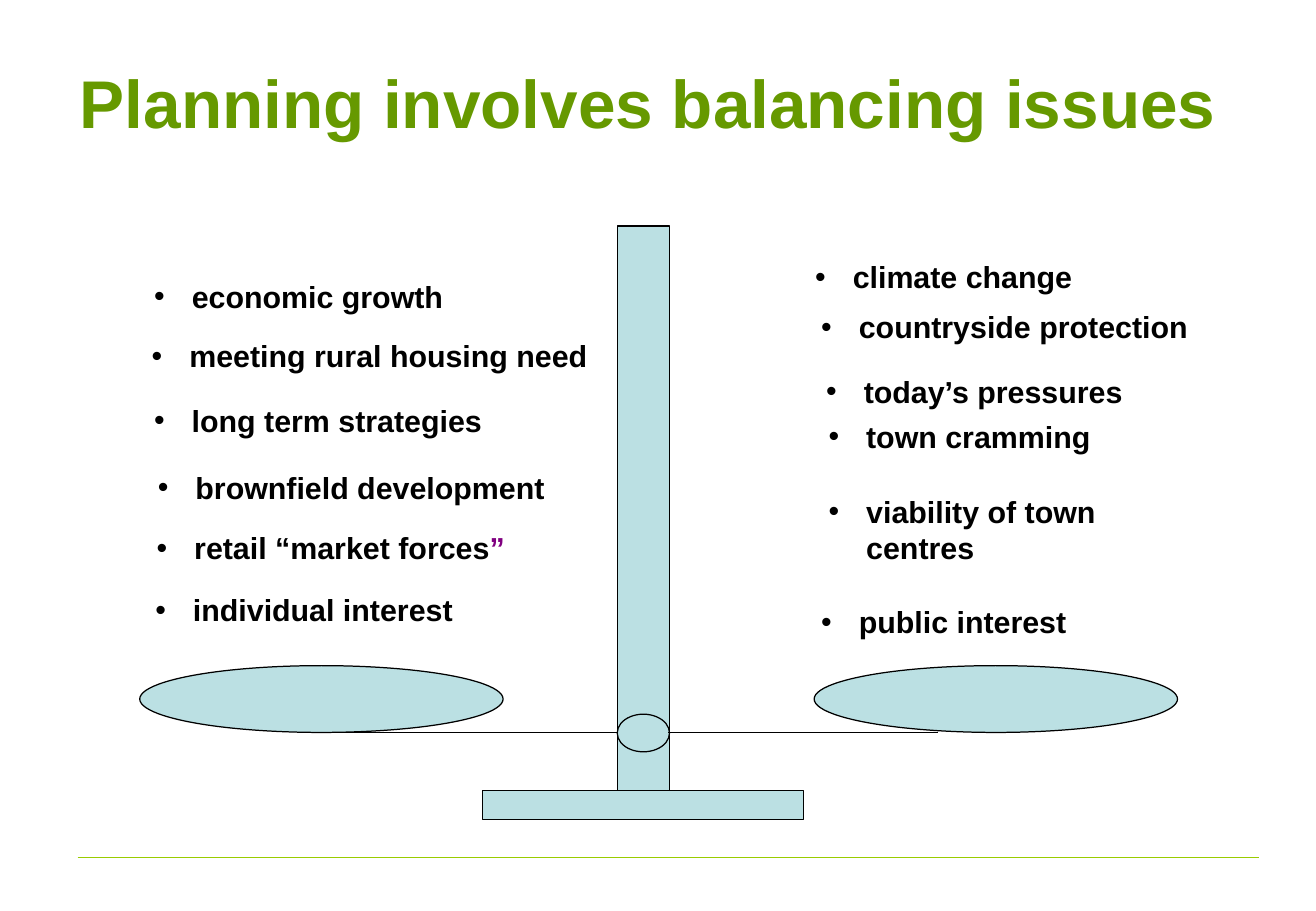
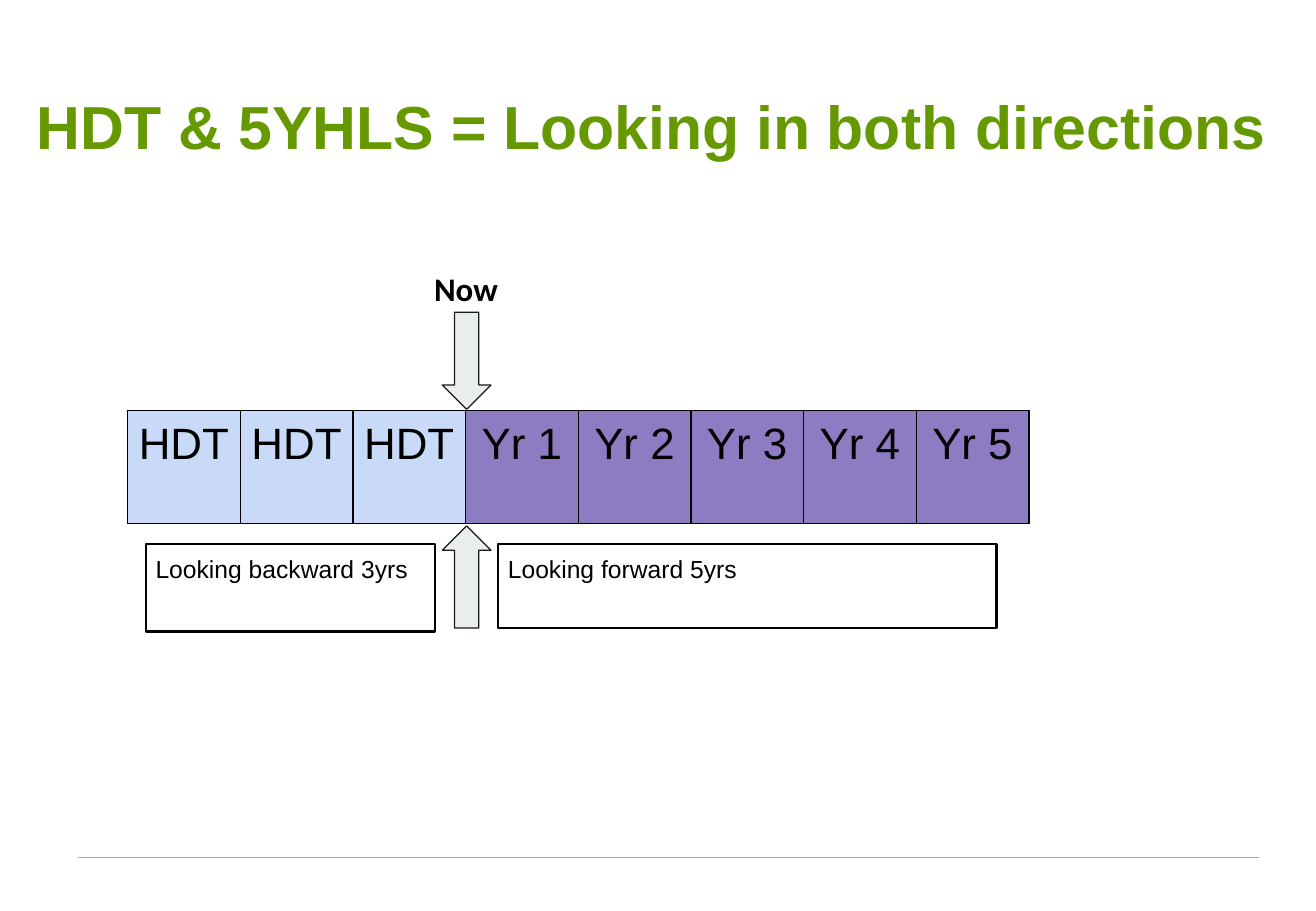
from lxml import etree
from pptx import Presentation
from pptx.dml.color import RGBColor
from pptx.enum import shapes, text
from pptx.oxml import ns
from pptx.util import Inches, Pt

BLACK = RGBColor(0x00, 0x00, 0x00)
TITLE_GREEN = RGBColor(0x66, 0x99, 0x00)
RULE_GREEN = RGBColor(0x99, 0xCC, 0x00)
SCALE_BLUE = RGBColor(0xBB, 0xE0, 0xE3)
QUOTE_PURPLE = RGBColor(0x80, 0x00, 0x80)
PAST_BLUE = RGBColor(0xC9, 0xDA, 0xF8)
FUTURE_PURPLE = RGBColor(0x8E, 0x7C, 0xC3)
ARROW_GREY = RGBColor(0xE9, 0xED, 0xEE)
ARROW_LINE = RGBColor(0x1A, 0x1A, 0x1A)

SHAPE = shapes.MSO_SHAPE
LEFT, CENTER = text.PP_ALIGN.LEFT, text.PP_ALIGN.CENTER
TOP, MIDDLE = text.MSO_ANCHOR.TOP, text.MSO_ANCHOR.MIDDLE
DEFAULT_INSETS = (0.1, 0.05)
EVEN_INSETS = (0.08, 0.08)
BULLET_INDENT = 0.31

# Each issue: text, left, top, width, height
ISSUES = [
    ("economic growth", 1.17, 2.24, 2.61, 0.4),
    ("meeting rural housing need", 1.15, 2.73, 3.97, 0.4),
    ("long term strategies", 1.17, 3.26, 2.93, 0.4),
    ("brownfield development", 1.2, 3.81, 3.42, 0.4),
    ("retail “market forces”", 1.19, 4.31, 3.1, 0.4),
    ("individual interest", 1.18, 4.82, 2.68, 0.4),
    ("climate change", 6.61, 2.08, 2.34, 0.4),
    ("countryside protection", 6.66, 2.49, 3.56, 0.4),
    ("today’s pressures", 6.7, 3.02, 3.21, 0.4),
    ("town cramming", 6.72, 3.39, 2.87, 0.4),
    ("viability of town centres", 6.72, 4.01, 3.28, 0.71),
    ("public interest", 6.66, 4.92, 2.24, 0.4),
]
SCALE_PARTS = [
    (SHAPE.OVAL, (1.15, 5.48, 2.99, 0.55)),
    (SHAPE.OVAL, (6.7, 5.48, 2.99, 0.55)),
    (SHAPE.RECTANGLE, (5.08, 1.86, 0.43, 4.65)),
    (SHAPE.RECTANGLE, (3.97, 6.51, 2.64, 0.24)),
    (SHAPE.OVAL, (5.08, 5.88, 0.43, 0.31)),
]
BEAM_Y = 6.03
BEAM_ARMS = [(2.77, 5.08), (5.5, 7.72)]

YEARS = [("HDT", PAST_BLUE)] * 3 + [
    (f"Yr {number}", FUTURE_PURPLE) for number in range(1, 6)]
TIMELINE = (1.05, 3.38, 7.42, 0.93)
NOW_ARROWS = [((3.64, 2.57, 0.4, 0.8), 0), ((3.64, 4.33, 0.4, 0.84), 180)]
DIRECTIONS = [
    ("Looking backward 3yrs", (1.2, 4.48, 2.38, 0.72)),
    ("Looking forward 5yrs", (4.1, 4.48, 4.1, 0.69)),
]


def inches(values):
    return [Inches(value) for value in values]


def write(frame, words, size, bold=False, color=BLACK, font="Arial",
          align=LEFT, anchor=TOP, insets=DEFAULT_INSETS):
    frame.word_wrap = True
    frame.vertical_anchor = anchor
    frame.margin_left = frame.margin_right = Inches(insets[0])
    frame.margin_top = frame.margin_bottom = Inches(insets[1])
    paragraph = frame.paragraphs[0]
    paragraph.text = words
    paragraph.alignment = align
    format_run(paragraph.runs[0], size, bold, color, font)
    return paragraph


def format_run(run, size, bold, color, font="Arial"):
    run.font.size = Pt(size)
    run.font.bold = bold
    run.font.name = font
    run.font.color.rgb = color


def add_text(slide, box, words, size, **style):
    return write(slide.shapes.add_textbox(*inches(box)).text_frame,
                 words, size, **style)


def add_outlined(slide, kind, box, fill=None, line=BLACK, width=0.75):
    shape = slide.shapes.add_shape(kind, *inches(box))
    shape.shadow.inherit = False
    if fill is None:
        shape.fill.background()
    else:
        shape.fill.solid()
        shape.fill.fore_color.rgb = fill
    shape.line.color.rgb = line
    shape.line.width = Pt(width)
    return shape


def add_horizontal(slide, left, right, y, color=BLACK):
    line = slide.shapes.add_connector(
        shapes.MSO_CONNECTOR.STRAIGHT, *inches((left, y, right, y)))
    line.line.color.rgb = color
    line.line.width = Pt(0.75)
    etree.SubElement(line._element.spPr, ns.qn("a:effectLst"))


def add_bullet(paragraph):
    properties = paragraph._p.get_or_add_pPr()
    properties.set("marL", str(Inches(BULLET_INDENT)))
    properties.set("indent", str(-Inches(BULLET_INDENT)))
    etree.SubElement(properties, ns.qn("a:buFont"), typeface="Arial")
    etree.SubElement(properties, ns.qn("a:buChar"), char="•")


def add_borders(cell):
    """Draw thin black edges; they must precede the fill in the cell XML."""
    properties = cell._tc.get_or_add_tcPr()
    for position, side in enumerate(("a:lnL", "a:lnR", "a:lnT", "a:lnB")):
        edge = etree.Element(ns.qn(side), w=str(Pt(1)))
        fill = etree.SubElement(edge, ns.qn("a:solidFill"))
        etree.SubElement(fill, ns.qn("a:srgbClr"), val=str(BLACK))
        properties.insert(position, edge)


def add_titled_slide(presentation, title, box, size, insets=DEFAULT_INSETS):
    slide = presentation.slides.add_slide(presentation.slide_layouts[6])
    add_horizontal(slide, 0.64, 10.36, 7.06, RULE_GREEN)
    add_text(slide, box, title, size, bold=True, color=TITLE_GREEN,
             anchor=MIDDLE, insets=insets)
    return slide


def build_balance(presentation):
    slide = add_titled_slide(presentation, "Planning involves balancing issues",
                             (0.56, 0.21, 9.75, 1.25), 40)
    for kind, box in SCALE_PARTS:
        add_outlined(slide, kind, box, SCALE_BLUE)
    for left, right in BEAM_ARMS:
        add_horizontal(slide, left, right, BEAM_Y)
    for words, *box in ISSUES:
        body = words.removesuffix("”")
        paragraph = add_text(slide, box, body, 18, bold=True)
        add_bullet(paragraph)
        if body != words:
            closing_quote = paragraph.add_run()
            closing_quote.text = "”"
            format_run(closing_quote, 18, True, QUOTE_PURPLE)


def build_timeline(presentation):
    slide = add_titled_slide(
        presentation, "HDT & 5YHLS = Looking in both directions",
        (0.22, 0.59, 10.47, 0.88), 36, insets=(0.08, 0.04))
    table = slide.shapes.add_table(1, len(YEARS), *inches(TIMELINE)).table
    table.first_row = table.horz_banding = False
    for cell, (label, color) in zip(table.iter_cells(), YEARS):
        cell.fill.solid()
        cell.fill.fore_color.rgb = color
        add_borders(cell)
        paragraph = write(cell.text_frame, label, 26, align=CENTER)
        cell.vertical_anchor = TOP
        cell.margin_left = cell.margin_right = Inches(EVEN_INSETS[0])
        cell.margin_top = cell.margin_bottom = Inches(EVEN_INSETS[1])
    for box, rotation in NOW_ARROWS:
        arrow = add_outlined(slide, SHAPE.DOWN_ARROW, box, ARROW_GREY, ARROW_LINE)
        arrow.rotation = rotation
    add_text(slide, (3.01, 2.13, 1.65, 0.43), "Now", 19.5, bold=True,
             font="Calibri", align=CENTER, insets=EVEN_INSETS)
    for words, box in DIRECTIONS:
        frame = add_outlined(slide, SHAPE.RECTANGLE, box, width=1.5).text_frame
        write(frame, words, 14.6, insets=EVEN_INSETS)


def main():
    presentation = Presentation()
    presentation.slide_width, presentation.slide_height = inches((10.83, 7.5))
    build_balance(presentation)
    build_timeline(presentation)
    presentation.save("out.pptx")


if __name__ == "__main__":
    main()
